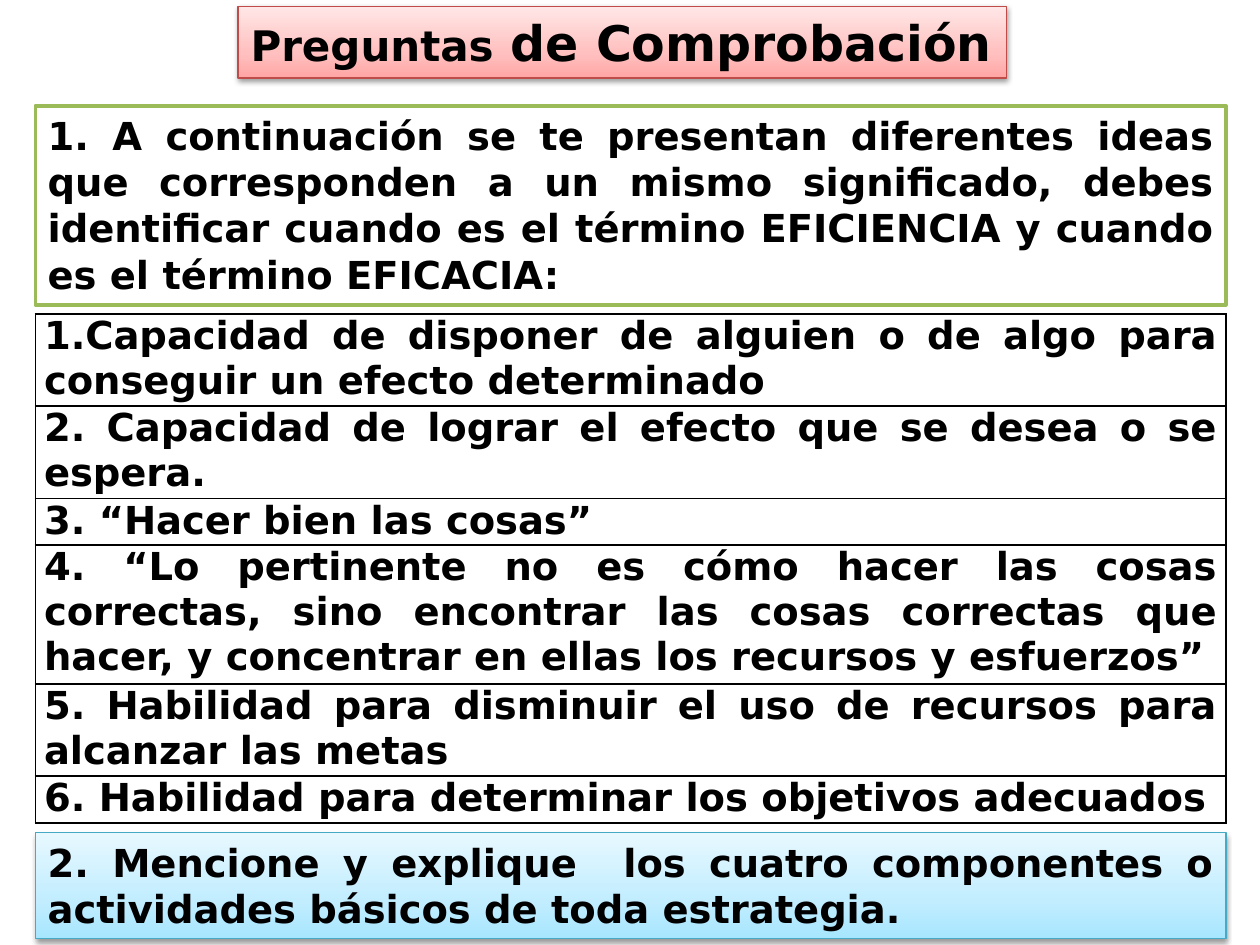
"""Build a slide of review questions on efficiency, efficacy and strategy."""
import copy

import lxml.etree
import pptx
import pptx.dml.color
import pptx.enum.shapes
import pptx.enum.text
import pptx.oxml
import pptx.oxml.ns
import pptx.util

Inches = pptx.util.Inches
Pt = pptx.util.Pt
RGBColor = pptx.dml.color.RGBColor
qn = pptx.oxml.ns.qn

BLACK = RGBColor(0x00, 0x00, 0x00)
WHITE = RGBColor(0xFF, 0xFF, 0xFF)
GREEN = RGBColor(0x9B, 0xBB, 0x59)
RED = RGBColor(0xBF, 0x4C, 0x48)
TEAL = RGBColor(0x46, 0xAA, 0xC5)
PINKS = [RGBColor(0xFF, 0xA6, 0xA5), RGBColor(0xFF, 0xC0, 0xBF), RGBColor(0xFF, 0xE7, 0xE7)]
BLUES = [RGBColor(0xA7, 0xE6, 0xFF), RGBColor(0xC1, 0xED, 0xFF), RGBColor(0xE7, 0xF8, 0xFF)]
STOPS = [0, 0.35, 1]

LEFT, WIDTH = 0.28, 9.45
BODY_SIZE = 22
FONT = {"name": "DejaVu Sans", "bold": True}

TITLE = [("Preguntas", 24), (" de Comprobación", 28)]
QUESTION_1 = (
    "1. A continuación se te presentan diferentes ideas que corresponden a un mismo "
    "significado, debes identificar cuando es el término EFICIENCIA y cuando es el "
    "término EFICACIA:"
)
QUESTION_2 = (
    "2. Mencione y explique  los cuatro componentes o actividades básicos de toda estrategia."
)
IDEAS = [
    ("1.Capacidad de disponer de alguien o de algo para conseguir un efecto determinado", 0.73),
    ("2. Capacidad de lograr el efecto que se desea o se espera.", 0.73),
    ("3. “Hacer bien las cosas”", 0.37),
    ("4. “Lo pertinente no es cómo hacer las cosas correctas, sino encontrar las cosas "
     "correctas que hacer, y concentrar en ellas los recursos y esfuerzos”", 1.1),
    ("5. Habilidad para disminuir el uso de recursos para alcanzar las metas", 0.73),
    ("6. Habilidad para determinar los objetivos adecuados", 0.37),
]


def write_text(frame, runs):
    """Write justified bold runs, each a pair of text and size."""
    para = frame.paragraphs[0]
    para.alignment = pptx.enum.text.PP_ALIGN.JUSTIFY
    for text, size in runs:
        span = para.add_run()
        span.text = text
        for name, value in {**FONT, "size": Pt(size)}.items():
            setattr(span.font, name, value)
        span.font.color.rgb = BLACK


def add_box(page, place, runs, line, weight, wrap=True):
    """Add a white outlined rectangle with text."""
    box = page.shapes.add_shape(
        pptx.enum.shapes.MSO_SHAPE.RECTANGLE, *[Inches(length) for length in place])
    box.shadow.inherit = False
    box.fill.solid()
    box.fill.fore_color.rgb = WHITE
    box.line.color.rgb = line
    box.line.width = Pt(weight)
    layout = {
        "word_wrap": wrap,
        "auto_size": pptx.enum.text.MSO_AUTO_SIZE.SHAPE_TO_FIT_TEXT,
        "vertical_anchor": pptx.enum.text.MSO_ANCHOR.TOP,
    }
    for name, value in layout.items():
        setattr(box.text_frame, name, value)
    write_text(box.text_frame, runs)
    return box


def shade_box(box, colors):
    """Give a box an upward three-stop gradient and a soft shadow below."""
    box.fill.gradient()
    box.fill.gradient_angle = 90
    properties = box._element.spPr
    first_stop = properties.find(".//" + qn("a:gs"))
    first_stop.addnext(copy.deepcopy(first_stop))
    for stop, color, position in zip(box.fill.gradient_stops, colors, STOPS):
        stop.color.rgb = color
        stop.position = position
    shadow = lxml.etree.SubElement(
        properties.find(qn("a:effectLst")), qn("a:outerShdw"),
        blurRad=str(Pt(3.1)), dist=str(Pt(1.6)), dir="5400000", rotWithShape="0")
    color = lxml.etree.SubElement(shadow, qn("a:srgbClr"), val=str(BLACK))
    lxml.etree.SubElement(color, qn("a:alpha"), val="38000")


def border_cell(cell):
    """Draw a thin black border on all sides of a cell."""
    properties = cell._tc.get_or_add_tcPr()
    for index, side in enumerate(["lnL", "lnR", "lnT", "lnB"]):
        border = pptx.oxml.parse_xml(
            f'<a:{side} {pptx.oxml.ns.nsdecls("a")} w="{Pt(1)}"><a:solidFill>'
            f'<a:srgbClr val="{BLACK}"/></a:solidFill></a:{side}>')
        properties.insert(index, border)


def add_ideas_table(page, top):
    """Add the one-column table of ideas."""
    height = sum(row_height for _, row_height in IDEAS)
    table = page.shapes.add_table(
        len(IDEAS), 1, Inches(LEFT), Inches(top), Inches(WIDTH), Inches(height)).table
    table.first_row = False
    table.horz_banding = False
    margins = {"margin_left": 0.07, "margin_right": 0.07, "margin_top": 0, "margin_bottom": 0}
    for row, (text, row_height) in zip(table.rows, IDEAS):
        row.height = Inches(row_height)
        cell = row.cells[0]
        cell.fill.background()
        for name, value in margins.items():
            setattr(cell, name, Inches(value))
        border_cell(cell)
        write_text(cell.text_frame, [(text, BODY_SIZE)])


def main():
    """Build and save the slide."""
    deck = pptx.Presentation()
    deck.slide_width, deck.slide_height = Inches(10), Inches(7.5)
    page = deck.slides.add_slide(deck.slide_layouts[6])
    title = add_box(page, (1.89, 0.05, 6.1, 0.57), TITLE, RED, 0.75, wrap=False)
    shade_box(title, PINKS)
    add_box(page, (LEFT, 0.84, WIDTH, 1.58), [(QUESTION_1, BODY_SIZE)], GREEN, 2)
    add_ideas_table(page, 2.49)
    closing = add_box(page, (LEFT, 6.61, WIDTH, 0.84), [(QUESTION_2, BODY_SIZE)], TEAL, 0.75)
    shade_box(closing, BLUES)
    deck.save("out.pptx")


if __name__ == "__main__":
    main()
